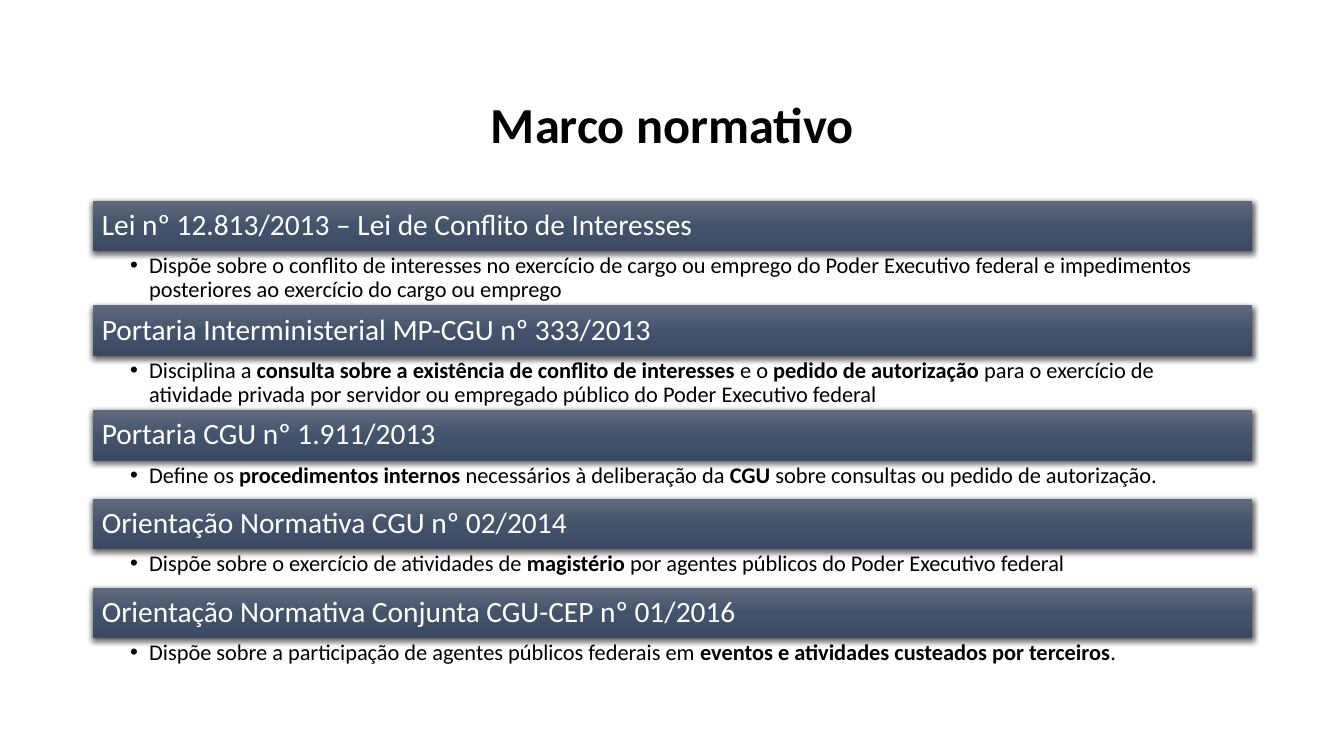
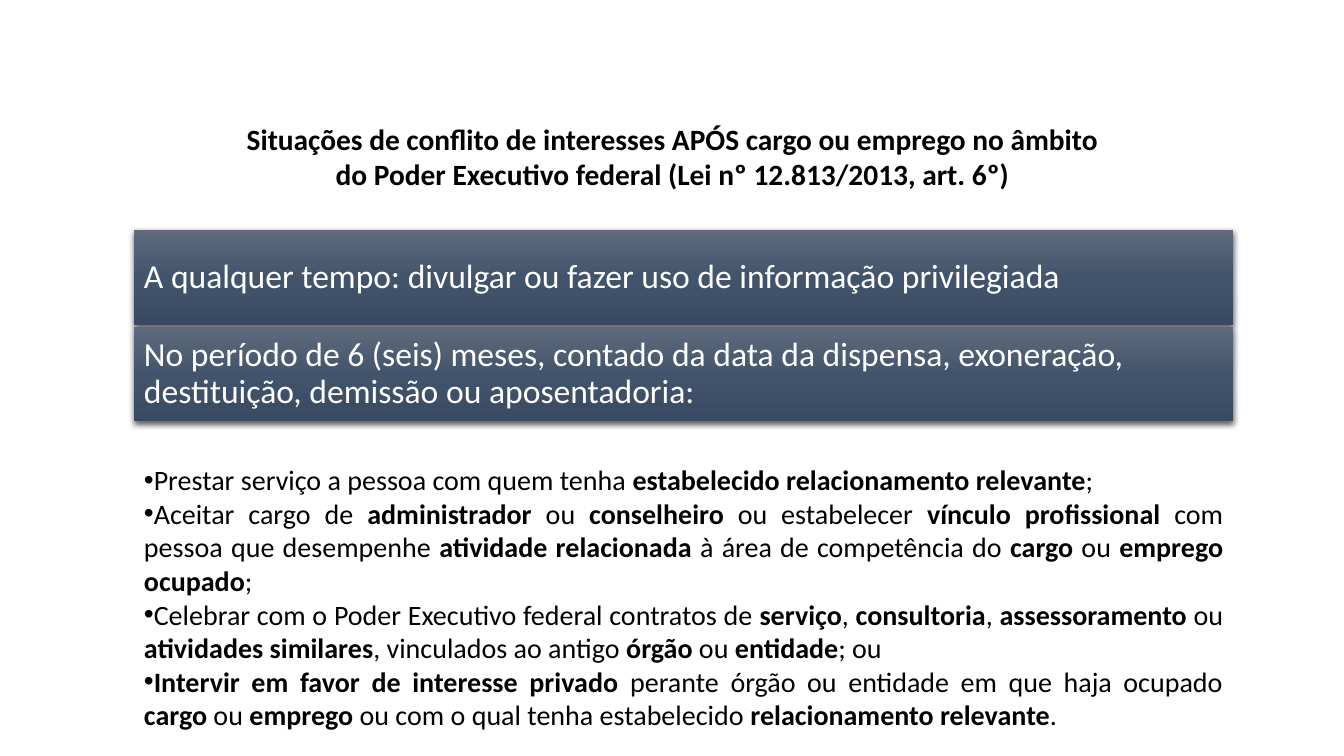
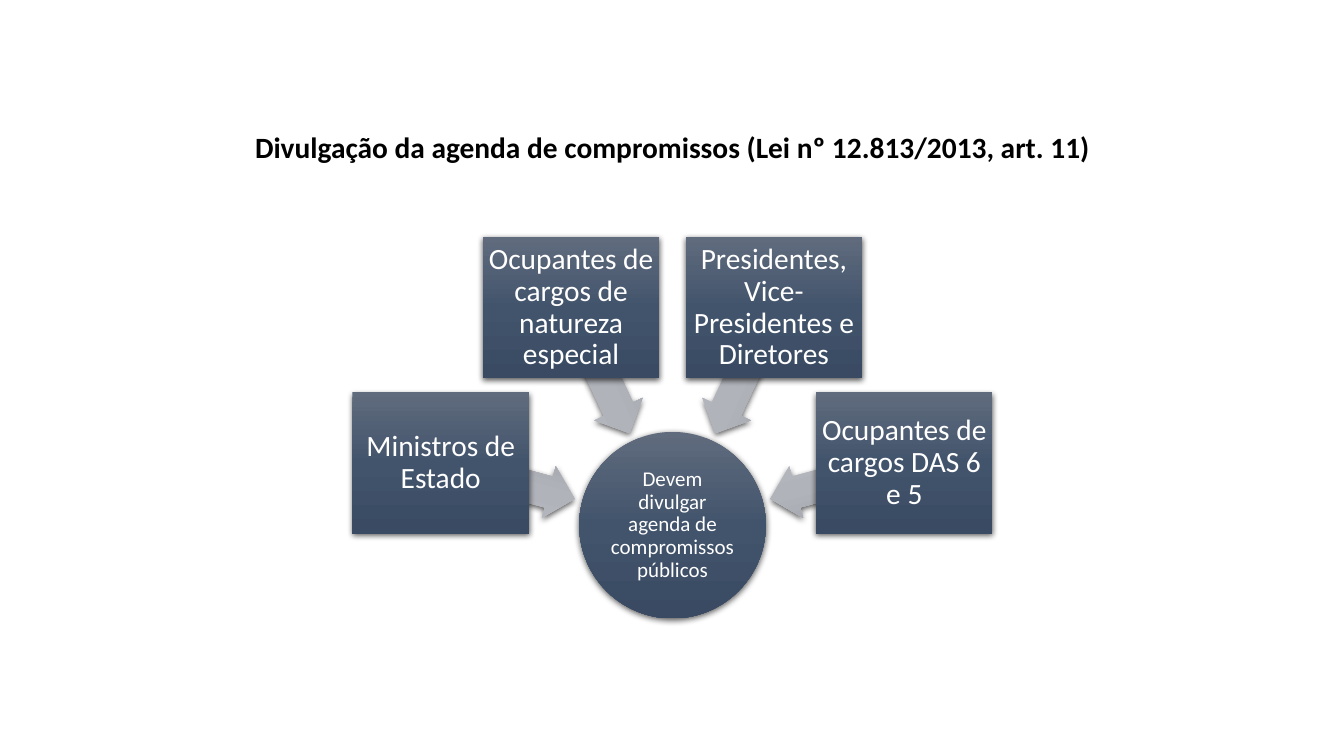
from math import cos, radians, sin

from lxml import etree
from pptx import Presentation
from pptx.dml.color import RGBColor
from pptx.enum.shapes import MSO_SHAPE
from pptx.enum.text import MSO_ANCHOR, PP_ALIGN
from pptx.oxml import parse_xml
from pptx.oxml.ns import nsdecls, qn
from pptx.util import Inches, Pt

RECT, OVAL, ARROW = MSO_SHAPE.RECTANGLE, MSO_SHAPE.OVAL, MSO_SHAPE.LEFT_ARROW
LEFT, MID, FULL = PP_ALIGN.LEFT, PP_ALIGN.CENTER, PP_ALIGN.JUSTIFY
TOP, CENTRE = MSO_ANCHOR.TOP, MSO_ANCHOR.MIDDLE

FONT = "Calibri"
COLOURS = {"ink": "000000", "paper": "FFFFFF"}
FADES = {
    "navy": ("606B7D", "42546C", "394A62"),
    "grey": ("BABDC2", "B0B3BA", "9C9FA6"),
}
SHADOW = (
    f'<a:outerShdw {nsdecls("a")} blurRad="57150" dist="19050" dir="5400000" '
    'algn="ctr" rotWithShape="0"><a:srgbClr val="000000">'
    '<a:alpha val="63000"/></a:srgbClr></a:outerShdw>'
)


class Deck:
    def __init__(self):
        self.prs = Presentation()
        self.prs.slide_width = Inches(13.33)
        self.prs.slide_height = Inches(7.5)
        self.slide = None

    def page(self):
        self.slide = self.prs.slides.add_slide(self.prs.slide_layouts[6])

    def letter(self, shape, texts, size, colour="ink", align=LEFT, anchor=CENTRE,
               pads=(0.1, 0.05, 0.1, 0.05), bold=False, pitch=0.9, dent=None):
        """Fill a shape with paragraphs; ** switches bold, dent is (margin, indent)."""
        frame = shape.text_frame
        frame.word_wrap = True
        frame.vertical_anchor = anchor
        (frame.margin_left, frame.margin_top,
         frame.margin_right, frame.margin_bottom) = map(Inches, pads)
        for i, text in enumerate(texts):
            par = frame.add_paragraph() if i else frame.paragraphs[0]
            par.alignment = align
            par.line_spacing = pitch
            if dent:
                props = par._p.get_or_add_pPr()
                props.set("marL", str(Inches(dent[0])))
                props.set("indent", str(Inches(dent[1])))
                etree.SubElement(props, qn("a:buFont")).set("typeface", "Arial")
                etree.SubElement(props, qn("a:buChar")).set("char", "•")
            for k, part in enumerate(text.split("**")):
                if part:
                    run = par.add_run()
                    run.text = part
                    run.font.name = FONT
                    run.font.size = Pt(size)
                    run.font.bold = bold or k % 2 == 1
                    run.font.color.rgb = RGBColor.from_string(COLOURS[colour])

    def text(self, box, texts, size, **style):
        shape = self.slide.shapes.add_textbox(*map(Inches, box))
        self.letter(shape, texts, size, **style)

    def title(self, box, text, size=21, pitch=1.0):
        self.text(box, [text], size, align=MID, bold=True, pitch=pitch,
                  pads=(0.07, 0.04, 0.07, 0.04))

    def solid(self, kind, box, fade="navy"):
        """Add a shape with a vertical gradient and a soft shadow."""
        shape = self.slide.shapes.add_shape(kind, *map(Inches, box))
        shape.line.fill.background()
        shape.shadow.inherit = False
        stops = "".join(
            f'<a:gs pos="{i * 50000}"><a:srgbClr val="{c}"/></a:gs>'
            for i, c in enumerate(FADES[fade]))
        props = shape._element.spPr
        props.find(qn("a:prstGeom")).addnext(parse_xml(
            f'<a:gradFill {nsdecls("a")} rotWithShape="1"><a:gsLst>{stops}</a:gsLst>'
            '<a:lin ang="5400000" scaled="0"/></a:gradFill>'))
        props.find(qn("a:effectLst")).append(parse_xml(SHADOW))
        return shape

    def label(self, kind, box, text, size, pad, align=LEFT):
        self.letter(self.solid(kind, box), [text], size, colour="paper",
                    align=align, pads=(pad,) * 4)

    def arrow(self, box, turn):
        shape = self.solid(ARROW, box, "grey")
        shape.adjustments[0] = 0.6
        shape.adjustments[1] = 0.5
        shape.rotation = turn


def laws(deck):
    deck.page()
    deck.title((0.92, 0.98, 11.5, 0.57), "Marco normativo", 36, 0.9)
    tall, low, bar = 0.54, 0.38, 0.5
    rows = [
        ("Lei nº 12.813/2013 – Lei de Conflito de Interesses", tall,
         "Dispõe sobre o conflito de interesses no exercício de cargo ou emprego do "
         "Poder Executivo federal e impedimentos posteriores ao exercício do cargo "
         "ou emprego"),
        ("Portaria Interministerial MP-CGU nº 333/2013", tall,
         "Disciplina a **consulta sobre a existência de conflito de interesses** e o "
         "**pedido de autorização** para o exercício de atividade privada por servidor "
         "ou empregado público do Poder Executivo federal"),
        ("Portaria CGU nº 1.911/2013", low,
         "Define os **procedimentos internos** necessários à deliberação da **CGU** "
         "sobre consultas ou pedido de autorização."),
        ("Orientação Normativa CGU nº 02/2014", low,
         "Dispõe sobre o exercício de atividades de **magistério** por agentes "
         "públicos do Poder Executivo federal"),
        ("Orientação Normativa Conjunta CGU-CEP nº 01/2016", low,
         "Dispõe sobre a participação de agentes públicos federais em **eventos e "
         "atividades custeados por terceiros**."),
    ]
    top = 1.99
    for head, high, note in rows:
        deck.label(RECT, (0.92, top, 11.5, bar), head, 21, 0.09)
        deck.text((0.92, top + bar, 11.5, high), [note], 16, anchor=TOP,
                  pads=(0.37, 0.03, 0.16, 0.03), dent=(0.19, -0.19))
        top += bar + high


def after(deck):
    deck.page()
    deck.title((2.24, 1.21, 8.86, 0.68),
               "Situações de conflito de interesses APÓS cargo ou emprego no âmbito "
               "do Poder Executivo federal (Lei nº 12.813/2013, art. 6º)")
    bars = [
        "A qualquer tempo: divulgar ou fazer uso de informação privilegiada",
        "No período de 6 (seis) meses, contado da data da dispensa, exoneração, "
        "destituição, demissão ou aposentadoria:",
    ]
    for i, text in enumerate(bars):
        deck.label(RECT, (1.33, 2.28 + 0.96 * i, 10.9, 0.94), text, 24, 0.1)
    deck.text((1.33, 4.54, 10.9, 2.79), [
        "Prestar serviço a pessoa com quem tenha **estabelecido relacionamento "
        "relevante**;",
        "Aceitar cargo de **administrador** ou **conselheiro** ou estabelecer "
        "**vínculo profissional **com pessoa que desempenhe **atividade relacionada "
        "**à área de competência do **cargo** ou **emprego ocupado**;",
        "Celebrar com o Poder Executivo federal contratos de **serviço**, "
        "**consultoria**, **assessoramento** ou **atividades similares**, vinculados "
        "ao antigo **órgão** ou **entidade**; ou",
        "**Intervir em favor de interesse privado** perante órgão ou entidade em que "
        "haja ocupado **cargo** ou **emprego** ou com o qual tenha estabelecido"
        "** relacionamento relevante**.",
    ], 20, align=FULL, anchor=TOP, pitch=1.0, dent=(0, -0.31))


def agenda(deck):
    deck.page()
    deck.title((2.24, 1.27, 8.86, 0.37),
               "Divulgação da agenda de compromissos (Lei nº 12.813/2013, art. 11)")
    mid, low = 6.67, 5.21

    def orbit(angle, reach, wide, high):
        """Box of the given size centred at an angle and distance from the hub."""
        turn = radians(angle)
        return (mid + reach * cos(turn) - wide / 2,
                low + reach * sin(turn) - high / 2, wide, high)

    deck.label(OVAL, orbit(0, 0, 1.85, 1.85),
               "Devem divulgar agenda de compromissos públicos", 15, 0.01, MID)
    roles = [
        "Ministros de Estado",
        "Ocupantes de cargos de natureza especial",
        "Presidentes, Vice-Presidentes e Diretores",
        "Ocupantes de cargos DAS 6 e 5",
    ]
    for i, role in enumerate(roles):
        angle = 195 + 50 * i
        deck.arrow(orbit(angle, 1.69, 1.37, 0.53), angle)
        deck.label(RECT, orbit(angle, 2.38, 1.75, 1.4), role, 21, 0.04, MID)


def main():
    deck = Deck()
    laws(deck)
    after(deck)
    agenda(deck)
    deck.prs.save("out.pptx")


if __name__ == "__main__":
    main()
